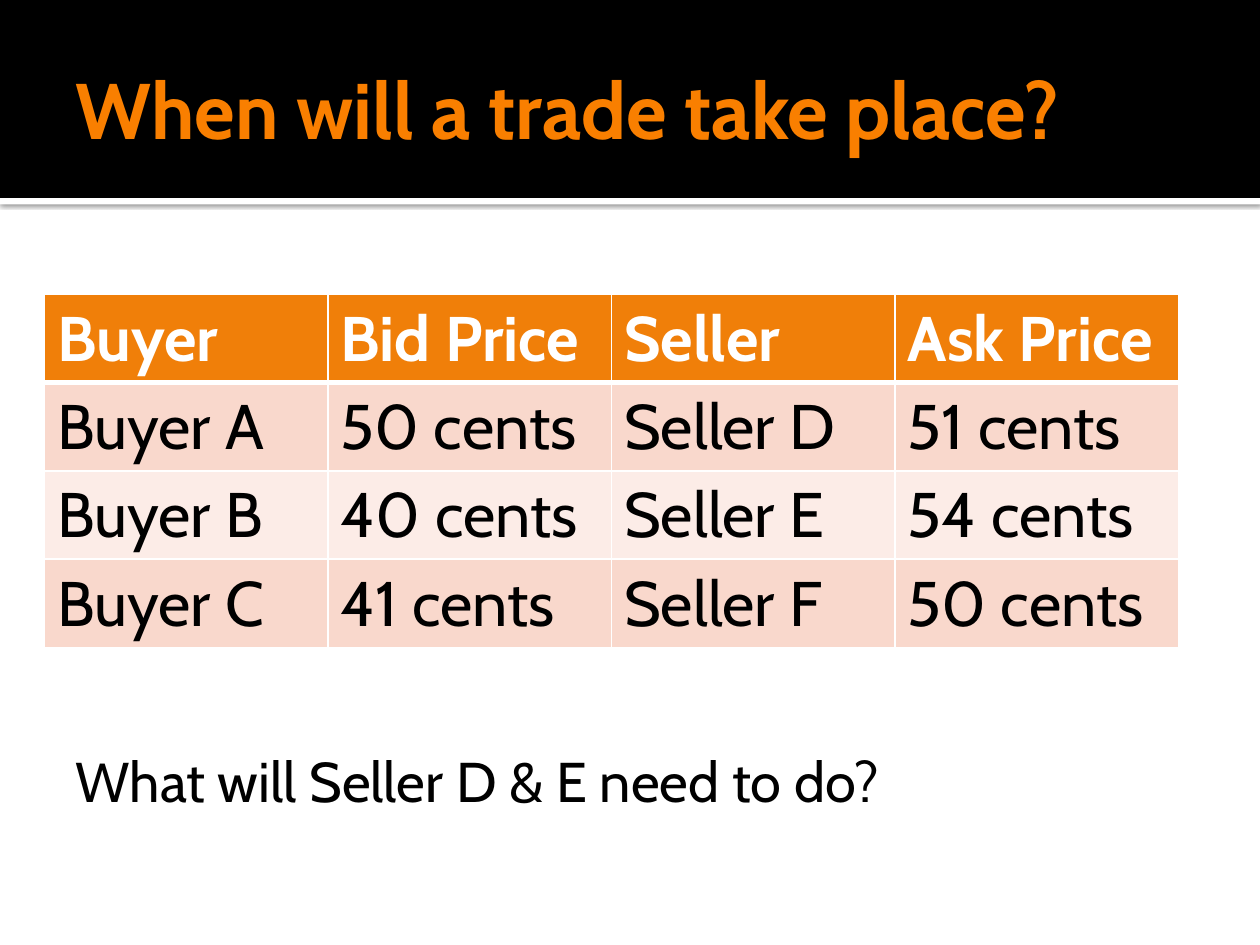
from lxml.etree import SubElement
from pptx import Presentation
from pptx.dml.color import RGBColor
from pptx.enum.shapes import MSO_SHAPE
from pptx.enum.text import MSO_ANCHOR
from pptx.oxml import parse_xml
from pptx.oxml.ns import nsdecls, qn
from pptx.util import Cm, Pt

FONT = "Cabin"
BLACK = RGBColor(0x00, 0x00, 0x00)
WHITE = RGBColor(0xFF, 0xFF, 0xFF)
TITLE_ORANGE = RGBColor(0xF9, 0x7F, 0x00)
HEADER_ORANGE = RGBColor(0xF0, 0x7F, 0x09)
ROW_DARK = RGBColor(0xF9, 0xD8, 0xCC)
ROW_LIGHT = RGBColor(0xFC, 0xEC, 0xE7)

SLIDE_WIDTH = 25.4
SLIDE_HEIGHT = 19.05

ORDERS = [
    ["Buyer", "Bid Price", "Seller", "Ask Price"],
    ["Buyer A", "50 cents", "Seller D", "51 cents"],
    ["Buyer B", "40 cents", "Seller E", "54 cents"],
    ["Buyer C", "41 cents", "Seller F", "50 cents"],
]


def format_text(text_frame, size, color, bold=False):
    for paragraph in text_frame.paragraphs:
        for run in paragraph.runs:
            run.font.name = FONT
            run.font.size = Pt(size)
            run.font.bold = bold
            run.font.color.rgb = color


def add_bar(slide, left, top, width, height, color):
    shape = slide.shapes.add_shape(
        MSO_SHAPE.RECTANGLE, Cm(left), Cm(top), Cm(width), Cm(height)
    )
    shape.fill.solid()
    shape.fill.fore_color.rgb = color
    shape.line.fill.background()
    shape.shadow.inherit = False
    return shape


def add_drop_shadow(shape):
    effects = shape.element.spPr.find(qn("a:effectLst"))
    effects.append(parse_xml(
        f'<a:outerShdw {nsdecls("a")} blurRad="{Pt(2.5)}" dist="{Pt(0.8)}" '
        'dir="5400000" algn="tl" rotWithShape="0">'
        '<a:srgbClr val="000000"><a:alpha val="60000"/></a:srgbClr>'
        '</a:outerShdw>'
    ))


def add_text(slide, left, top, width, height, text, size, color,
             bold=False, anchor=MSO_ANCHOR.TOP):
    box = slide.shapes.add_textbox(Cm(left), Cm(top), Cm(width), Cm(height))
    text_frame = box.text_frame
    text_frame.word_wrap = True
    text_frame.vertical_anchor = anchor
    text_frame.text = text
    format_text(text_frame, size, color, bold)


def add_title_band(slide, left, top, width, height):
    edge = add_bar(slide, left, top + height, width, 0.13, WHITE)
    add_drop_shadow(edge)
    add_bar(slide, left, top, width, height, BLACK)
    add_text(slide, left + 1.27, top + 0.43, width - 2.54, height - 0.51,
             "When will a trade take place?", 45, TITLE_ORANGE,
             bold=True, anchor=MSO_ANCHOR.MIDDLE)


def set_borders(cell, widths):
    properties = cell._tc.get_or_add_tcPr()
    for side, width in widths.items():
        line = SubElement(properties, qn(f"a:ln{side}"), w=str(Pt(width)))
        fill = SubElement(line, qn("a:solidFill"))
        SubElement(fill, qn("a:srgbClr"), val=str(WHITE))


def add_order_table(slide, left, top, width, height):
    row_count, column_count = len(ORDERS), len(ORDERS[0])
    table = slide.shapes.add_table(
        row_count, column_count, Cm(left), Cm(top), Cm(width), Cm(height)
    ).table
    for row, values in enumerate(ORDERS):
        header = row == 0
        if header:
            background = HEADER_ORANGE
        else:
            background = ROW_DARK if row % 2 else ROW_LIGHT
        for column, value in enumerate(values):
            cell = table.cell(row, column)
            set_borders(cell, {
                "L": 1, "R": 1,
                "T": 3 if row == 1 else 1,
                "B": 3 if header else 1,
            })
            cell.fill.solid()
            cell.fill.fore_color.rgb = background
            cell.text_frame.text = value
            format_text(cell.text_frame, 36, WHITE if header else BLACK, header)


def main():
    presentation = Presentation()
    presentation.slide_width = Cm(SLIDE_WIDTH)
    presentation.slide_height = Cm(SLIDE_HEIGHT)
    slide = presentation.slides.add_slide(presentation.slide_layouts[6])
    add_title_band(slide, 0, 0, SLIDE_WIDTH, 3.99)
    add_order_table(slide, 0.9, 5.93, 22.86, 7.12)
    add_text(slide, 1.27, 14.93, 22, 1.62,
             "What will Seller D & E need to do?", 32, BLACK)
    presentation.save("out.pptx")


if __name__ == "__main__":
    main()
